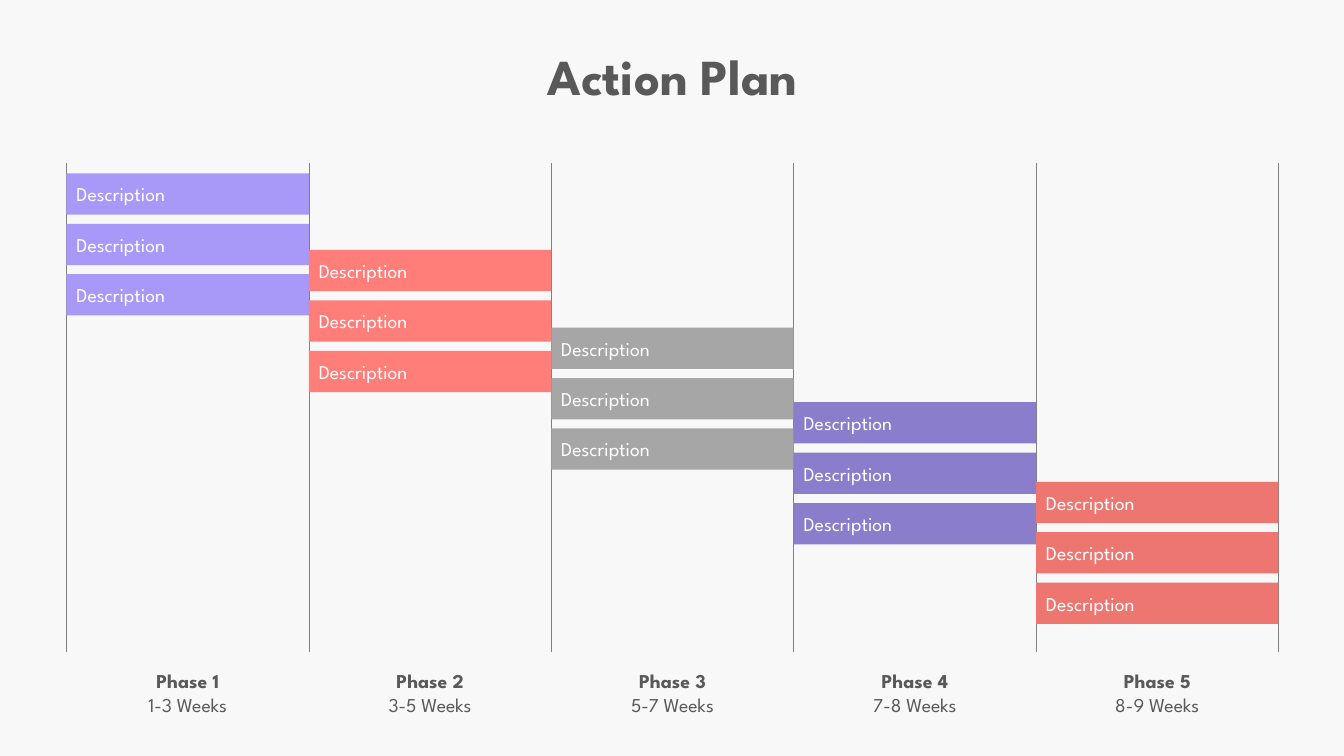
from dataclasses import dataclass
from pptx import Presentation
from pptx.dml.color import RGBColor
from pptx.enum import shapes, text
from pptx.oxml import ns
from pptx.util import Inches, Pt
from lxml import etree

TITLE = "Action Plan"
PHASES = [
    ("Phase 1", "1-3 Weeks", "A899F8", 1.72),
    ("Phase 2", "3-5 Weeks", "FF7E79", 2.48),
    ("Phase 3", "5-7 Weeks", "A6A6A6", 3.25),
    ("Phase 4", "7-8 Weeks", "8A7ECC", 3.99),
    ("Phase 5", "8-9 Weeks", "EE7671", 4.78),
]
TASKS = ["Description"] * 3


@dataclass
class Theme:
    font: str = "League Spartan"
    back: str = "F8F8F8"
    ink: str = "595959"
    light: str = "FFFFFF"
    rule: str = "808080"
    head: int = 36
    body: int = 14


theme = Theme()
LEFT, RIGHT = 0.66, 12.68
TOP, BASE = 1.62, 6.47
COL = (RIGHT - LEFT) / len(PHASES)
BAR, STEP = 0.41, 0.5
LABEL = 1.39


def style(par, size, color, bold=False, align=text.PP_ALIGN.CENTER):
    par.alignment = align
    font = par.font
    font.name, font.size, font.bold = theme.font, Pt(size), bold
    font.color.rgb = RGBColor.from_string(color)


def add_rule(slide, x):
    line = slide.shapes.add_connector(
        shapes.MSO_CONNECTOR.STRAIGHT,
        Inches(x), Inches(BASE), Inches(x), Inches(TOP))
    line.line.color.rgb = RGBColor.from_string(theme.rule)
    line.line.width = Pt(0.5)
    etree.SubElement(line._element.spPr, ns.qn("a:effectLst"))


def add_bar(slide, x, y, color, words):
    bar = slide.shapes.add_shape(
        shapes.MSO_SHAPE.RECTANGLE,
        Inches(x), Inches(y), Inches(COL), Inches(BAR))
    bar.shadow.inherit = False
    bar.fill.solid()
    bar.fill.fore_color.rgb = RGBColor.from_string(color)
    bar.line.fill.background()
    frame = bar.text_frame
    frame.text = words
    frame.vertical_anchor = text.MSO_ANCHOR.MIDDLE
    style(frame.paragraphs[0], theme.body, theme.light,
          align=text.PP_ALIGN.LEFT)


def add_label(slide, x, name, weeks):
    box = slide.shapes.add_textbox(
        Inches(x + (COL - LABEL) / 2), Inches(6.59),
        Inches(LABEL), Inches(0.57))
    frame = box.text_frame
    frame.word_wrap = True
    frame.text = f"{name}\n{weeks}"
    for par, bold in zip(frame.paragraphs, (True, False)):
        style(par, theme.body, theme.ink, bold)


def main():
    deck = Presentation()
    deck.slide_width, deck.slide_height = Inches(13.33), Inches(7.5)
    slide = deck.slides.add_slide(deck.slide_layouts[5])
    fill = slide.background.fill
    fill.solid()
    fill.fore_color.rgb = RGBColor.from_string(theme.back)

    title = slide.shapes.title
    title.left, title.top = Inches(0.71), Inches(0.4)
    title.width, title.height = Inches(11.92), Inches(0.71)
    title.text_frame.text = TITLE
    title.text_frame.vertical_anchor = text.MSO_ANCHOR.TOP
    style(title.text_frame.paragraphs[0], theme.head, theme.ink, True)

    for col in range(len(PHASES) + 1):
        add_rule(slide, LEFT + col * COL)
    for col, (name, weeks, color, top) in enumerate(PHASES):
        x = LEFT + col * COL
        add_label(slide, x, name, weeks)
        for row, task in enumerate(TASKS):
            add_bar(slide, x, top + row * STEP, color, task)

    deck.save("out.pptx")


if __name__ == "__main__":
    main()
